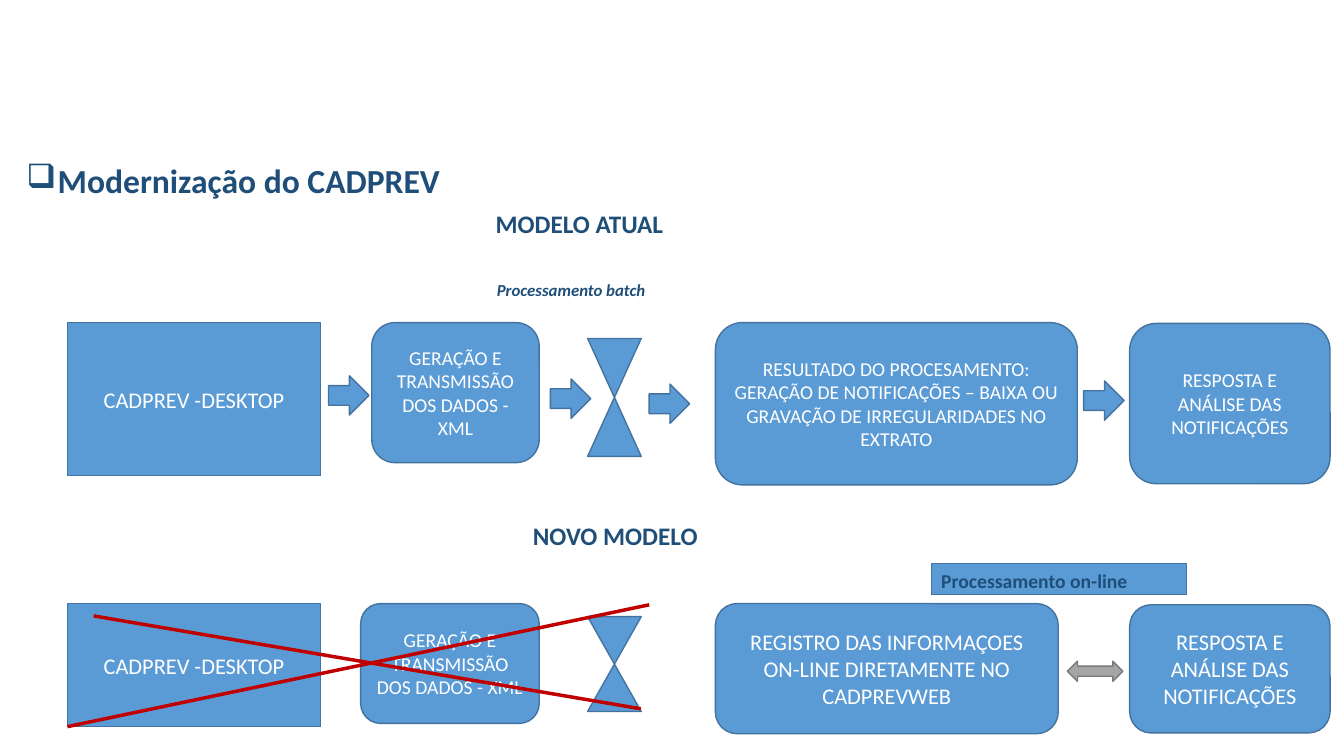
import pptx
import pptx.dml.color
import pptx.enum.shapes
import pptx.enum.text
import pptx.oxml.ns
import pptx.util
from lxml import etree

Cm = pptx.util.Cm
Pt = pptx.util.Pt
RGBColor = pptx.dml.color.RGBColor
Shape = pptx.enum.shapes.MSO_SHAPE
Align = pptx.enum.text.PP_ALIGN
Anchor = pptx.enum.text.MSO_ANCHOR

NAVY = RGBColor(0x1F, 0x4E, 0x79)
BLUE = RGBColor(0x5B, 0x9B, 0xD5)
BLUE_EDGE = RGBColor(0x43, 0x73, 0x9E)
GREY = RGBColor(0xA5, 0xA5, 0xA5)
GREY_EDGE = RGBColor(0x7A, 0x7A, 0x7A)
RED = RGBColor(0xC0, 0x00, 0x00)
WHITE = RGBColor(0xFF, 0xFF, 0xFF)

DESKTOP = "CADPREV -DESKTOP"
DATA = "GERAÇÃO E TRANSMISSÃO DOS DADOS - XML"
RESULT = ("RESULTADO DO PROCESAMENTO:\nGERAÇÃO DE NOTIFICAÇÕES – BAIXA OU "
          "GRAVAÇÃO DE IRREGULARIDADES NO EXTRATO")
REGISTER = "REGISTRO DAS INFORMAÇOES ON-LINE DIRETAMENTE NO CADPREVWEB"
REPLY = "RESPOSTA E ANÁLISE DAS NOTIFICAÇÕES"

HOURGLASS_LEFT, RESULT_LEFT, REPLY_LEFT = 13.11, 16.33, 26.77
DESKTOP_WIDTH, HOURGLASS_WIDTH, REPLY_WIDTH = 6.38, 1.35, 5.05


def place(origin, left, top, width, height):
    return Cm(origin[0] + left), Cm(origin[1] + top), Cm(width), Cm(height)


def write(box, text, size, color, align=Align.LEFT, bold=False, italic=False):
    frame = box.text_frame
    frame.word_wrap = True
    frame.text = text
    for para in frame.paragraphs:
        para.alignment = align
        for span in para.runs:
            span.font.name = "Calibri"
            span.font.size = Pt(size)
            span.font.color.rgb = color
            span.font.bold = bold
            span.font.italic = italic


def add_label(page, origin, area, text, size, italic=False):
    box = page.shapes.add_textbox(*place(origin, *area))
    write(box, text, size, NAVY, bold=True, italic=italic)


def add_figure(page, origin, kind, area, fill=BLUE, edge=BLUE_EDGE):
    figure = page.shapes.add_shape(kind, *place(origin, *area))
    figure.shadow.inherit = False
    figure.fill.solid()
    figure.fill.fore_color.rgb = fill
    figure.line.color.rgb = edge
    figure.line.width = Pt(1)
    return figure


def add_step(page, origin, kind, area, text, size):
    step = add_figure(page, origin, kind, area)
    write(step, text, size, WHITE, Align.CENTER)
    step.text_frame.vertical_anchor = Anchor.MIDDLE


def add_strike(page, origin, start_x, start_y, end_x, end_y):
    line = page.shapes.add_connector(
        pptx.enum.shapes.MSO_CONNECTOR.STRAIGHT,
        Cm(origin[0] + start_x), Cm(origin[1] + start_y),
        Cm(origin[0] + end_x), Cm(origin[1] + end_y))
    line.line.color.rgb = RED
    line.line.width = Pt(2.5)
    properties = line._element.spPr
    etree.SubElement(properties, pptx.oxml.ns.qn("a:effectLst"))


def add_title(page, origin):
    title = page.shapes.title
    title.left, title.top, title.width, title.height = place(origin, 0, 0, 11.84, 1.32)
    write(title, "Modernização do CADPREV", 24, NAVY, bold=True)
    title.text_frame.auto_size = pptx.enum.text.MSO_AUTO_SIZE.NONE
    title.text_frame.vertical_anchor = Anchor.TOP
    properties = title.text_frame.paragraphs[0]._p.get_or_add_pPr()
    properties.set("marL", str(Cm(0.79)))
    properties.set("indent", str(-Cm(0.79)))
    etree.SubElement(properties, pptx.oxml.ns.qn("a:buChar")).set("char", "❑")


def add_current_model(page, origin):
    add_label(page, origin, (10.54, 0, 6.27, 1.27), "MODELO ATUAL", 18)
    add_label(page, origin, (10.57, 1.8, 6.43, 1.19), "Processamento batch", 12, italic=True)
    rounded = Shape.FLOWCHART_ALTERNATE_PROCESS
    for kind, area, text, size in (
            (Shape.FLOWCHART_PROCESS, (0, 3, DESKTOP_WIDTH, 3.86), DESKTOP, 16),
            (rounded, (7.67, 3, 4.22, 3.53), DATA, 14),
            (rounded, (RESULT_LEFT, 3, 9.12, 4.09), RESULT, 14),
            (rounded, (REPLY_LEFT, 3.02, REPLY_WIDTH, 4.04), REPLY, 14)):
        add_step(page, origin, kind, area, text, size)
    add_figure(page, origin, Shape.FLOWCHART_COLLATE,
               (HOURGLASS_LEFT, 3.4, HOURGLASS_WIDTH, 2.97))
    for left, top in ((6.58, 4.34), (12.17, 4.42), (14.66, 4.55), (25.61, 4.47)):
        add_figure(page, origin, Shape.RIGHT_ARROW, (left, top, 1.02, 0.99))


def add_new_model(page, origin):
    add_label(page, origin, (11.48, 0, 6.93, 1.27), "NOVO MODELO", 18)
    rounded = Shape.FLOWCHART_ALTERNATE_PROCESS
    for kind, area, text, size in (
            (Shape.FLOWCHART_PROCESS, (0, 2.23, DESKTOP_WIDTH, 3.1), DESKTOP, 16),
            (rounded, (7.39, 2.23, 4.5, 3.02), DATA, 14),
            (rounded, (RESULT_LEFT, 2.23, 8.64, 3.28), REGISTER, 16),
            (rounded, (REPLY_LEFT, 2.26, REPLY_WIDTH, 3.23), REPLY, 16)):
        add_step(page, origin, kind, area, text, size)
    add_figure(page, origin, Shape.FLOWCHART_COLLATE,
               (HOURGLASS_LEFT, 2.56, HOURGLASS_WIDTH, 2.39))
    banner = add_figure(page, origin, Shape.RECTANGLE, (21.77, 1.22, 6.43, 0.79))
    write(banner, "Processamento on-line", 14, NAVY, bold=True)
    banner.text_frame.vertical_anchor = Anchor.TOP
    add_strike(page, origin, 0, 5.33, 14.66, 2.26)
    add_strike(page, origin, 14.45, 4.88, 0.66, 2.54)
    add_figure(page, origin, Shape.LEFT_RIGHT_ARROW, (25.2, 3.68, 1.4, 0.51), GREY, GREY_EDGE)


def main():
    deck = pptx.Presentation()
    deck.slide_width, deck.slide_height = Cm(33.87), Cm(19.05)
    page = deck.slides.add_slide(deck.slide_layouts[5])
    add_title(page, (0.41, 3.91))
    add_current_model(page, (1.7, 5.13))
    add_new_model(page, (1.7, 12.98))
    deck.save("out.pptx")


if __name__ == "__main__":
    main()
